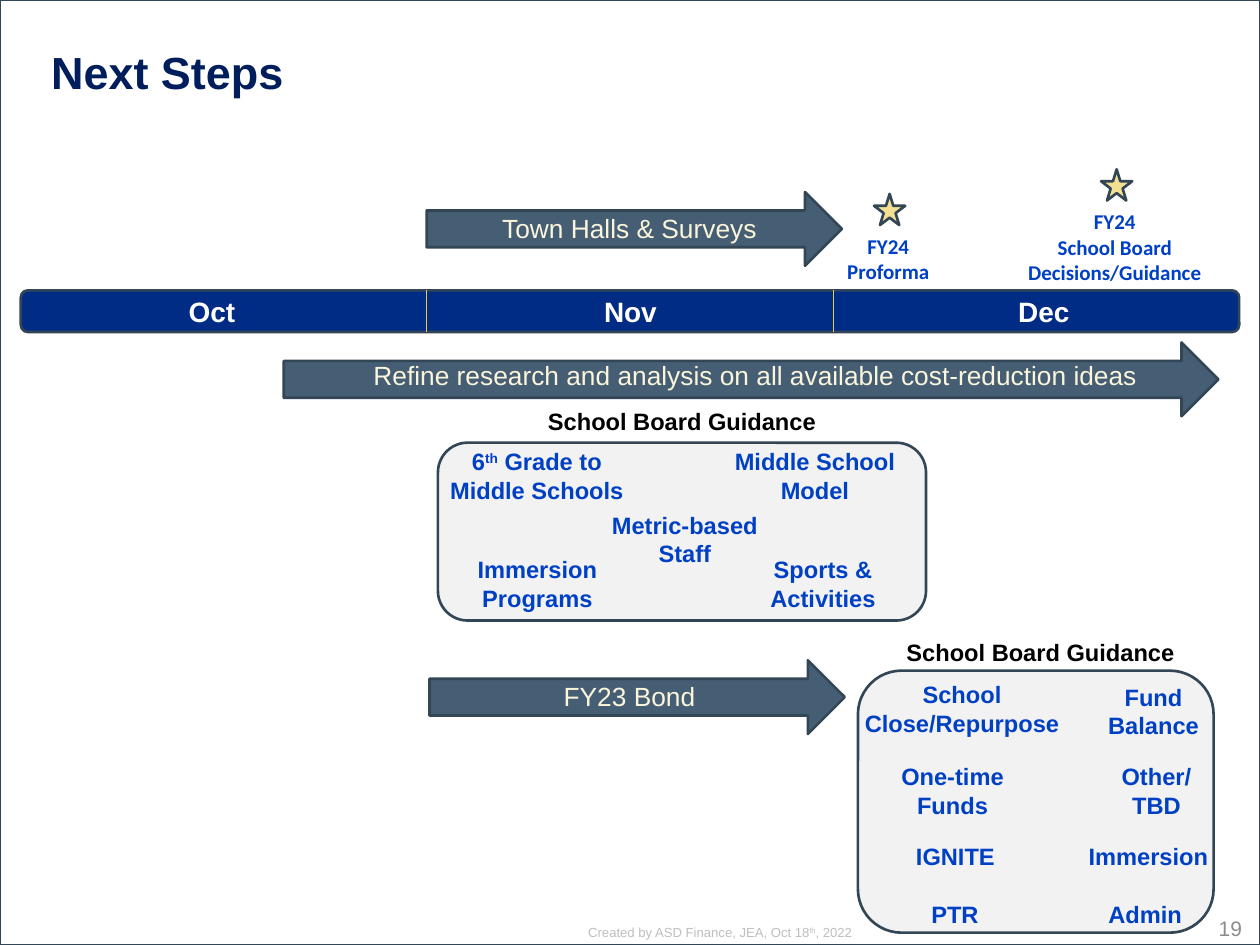
from pptx import Presentation
from pptx.dml.color import RGBColor
from pptx.enum.shapes import MSO_CONNECTOR as Connector, MSO_SHAPE as Shape
from pptx.enum.text import MSO_ANCHOR as Anchor, MSO_AUTO_SIZE as AutoSize, PP_ALIGN as Align
from pptx.oxml.ns import qn
from pptx.util import Emu, Pt

NAVY, BAR, BLUE = "001E5C", "002C86", "0040C4"
SLATE, OUTLINE, GOLD, CREAM = "455E74", "334656", "ECCA43", "FBF5DB"
PALE, STAR, WHITE, BLACK = "F2F2F2", "F4E092", "FFFFFF", "000000"
NUMBER_GRAY, FOOTER_GRAY = "8C8C8C", "BFBFBF"


def px(value):
    return Emu(value * 9144)


def color(hex_string):
    return RGBColor.from_string(hex_string)


class TimelineSlide:
    """Draws styled elements on one slide, with lengths in px."""

    def __init__(self, presentation):
        self.slide = presentation.slides.add_slide(presentation.slide_layouts[5])
        self.shapes = self.slide.shapes

    def add_lines(self, frame, text, size, hex_string, bold, align, font="Arial"):
        for index, line in enumerate(text.split("\n")):
            paragraph = frame.paragraphs[0] if index == 0 else frame.add_paragraph()
            paragraph.alignment = align
            for part, piece in enumerate(line.split("^")):
                run = paragraph.add_run()
                run.text = piece
                run.font.name = font
                run.font.size = Pt(size)
                run.font.bold = bold
                run.font.color.rgb = color(hex_string)
                if part % 2:
                    run._r.get_or_add_rPr().set("baseline", "30000")

    def title(self, text, left, top, width, height):
        title = self.shapes.title
        title.left, title.top, title.width, title.height = map(px, (left, top, width, height))
        frame = title.text_frame
        frame.auto_size = AutoSize.NONE
        frame.vertical_anchor = Anchor.MIDDLE
        self.add_lines(frame, text, 34.2, NAVY, True, Align.LEFT)

    def shape(self, kind, left, top, width, height, fill=None):
        shape = self.shapes.add_shape(kind, *map(px, (left, top, width, height)))
        shape.shadow.inherit = False
        if fill:
            shape.fill.solid()
            shape.fill.fore_color.rgb = color(fill)
        else:
            shape.fill.background()
        shape.line.color.rgb = color(OUTLINE)
        shape.line.width = Pt(2)

    def text(self, text, left, top, width, height, size=18, hex_string=BLUE,
             bold=True, align=Align.CENTER, font="Arial"):
        box = self.shapes.add_textbox(*map(px, (left, top, width, height)))
        frame = box.text_frame
        frame.word_wrap = False
        frame.auto_size = AutoSize.SHAPE_TO_FIT_TEXT
        self.add_lines(frame, text, size, hex_string, bold, align, font)
        return frame

    def divider(self, left, top, height):
        line = self.shapes.add_connector(
            Connector.STRAIGHT, *map(px, (left, top, left, top + height)))
        line.line.color.rgb = color(GOLD)
        line.line.width = Pt(0.75)
        properties = line._element.spPr
        properties.append(properties.makeelement(qn("a:effectLst"), {}))

    def arrow(self, text, left, top, width, text_left, text_top, text_width):
        self.shape(Shape.RIGHT_ARROW, left, top, width, 78, SLATE)
        self.text(text, text_left, text_top, text_width, 44, 20, CREAM, False, Align.LEFT)

    def milestone(self, text, star_left, star_top, left, width, height):
        self.shape(Shape.STAR_5_POINT, star_left, star_top, 33, 33, STAR)
        self.text(text, left, star_top + 37, width, height, 16, font="Calibri")

    def panel(self, left, top, width, height, heading_left, heading_top, topics):
        self.shape(Shape.ROUNDED_RECTANGLE, left, top, width, height, PALE)
        self.text("School Board Guidance", heading_left, heading_top, 306, 40, hex_string=BLACK)
        for text, text_left, text_top, text_width in topics:
            self.text(text, text_left, text_top, text_width, 71 if "\n" in text else 40)

    def page_number(self, text, left, top, width, height):
        frame = self.text(text, left, top, width, height, 16, NUMBER_GRAY, False, Align.RIGHT)
        frame.word_wrap = True
        frame.auto_size = AutoSize.NONE
        frame.vertical_anchor = Anchor.MIDDLE
        frame.margin_left = frame.margin_right = px(13)
        frame.margin_top = frame.margin_bottom = px(7)


def main():
    presentation = Presentation()
    presentation.slide_width, presentation.slide_height = px(1332), px(999)
    slide = TimelineSlide(presentation)
    slide.shape(Shape.RECTANGLE, 0, 0, 1332, 999)
    slide.title("Next Steps", 44, 40, 1243, 71)

    slide.shape(Shape.ROUNDED_RECTANGLE, 22, 307, 1288, 44, BAR)
    for month, left, width in (("Oct", 189, 70), ("Nov", 628, 77), ("Dec", 1066, 75)):
        slide.text(month, left, 307, width, 46, 21.3, WHITE)
    for left in (451, 881):
        slide.divider(left, 307, 44)

    slide.milestone("FY24\nProforma", 924, 205, 885, 108, 64)
    slide.milestone("FY24\nSchool Board\nDecisions/Guidance", 1164, 179, 1076, 205, 91)

    slide.arrow("Town Halls & Surveys", 451, 203, 439, 521, 219, 292)
    slide.arrow("Refine research and analysis on all available cost-reduction ideas",
                300, 362, 988, 385, 375, 834)
    slide.arrow("FY23 Bond", 454, 698, 439, 586, 714, 161)

    slide.panel(463, 468, 516, 188, 568, 425, (
        ("6^th^ Grade to\nMiddle Schools", 465, 468, 205),
        ("Middle School\nModel", 766, 468, 191),
        ("Metric-based\nStaff", 636, 535, 176),
        ("Immersion\nPrograms", 494, 582, 148),
        ("Sports &\nActivities", 804, 582, 132),
    ))
    slide.panel(907, 709, 376, 277, 947, 669, (
        ("School\nClose/Repurpose", 903, 714, 228),
        ("Fund\nBalance", 1161, 717, 117),
        ("One-time\nFunds", 942, 801, 130),
        ("Other/\nTBD", 1175, 801, 95),
        ("IGNITE", 958, 885, 104),
        ("Immersion", 1140, 885, 148),
        ("PTR", 974, 946, 71),
        ("Admin", 1161, 946, 99),
    ))

    slide.text("Created by ASD Finance, JEA, Oct 18^th^, 2022", 612, 972, 303, 27,
               10, FOOTER_GRAY, False, Align.LEFT)
    slide.page_number("19", 1026, 955, 300, 53)
    presentation.save("out.pptx")


if __name__ == "__main__":
    main()
